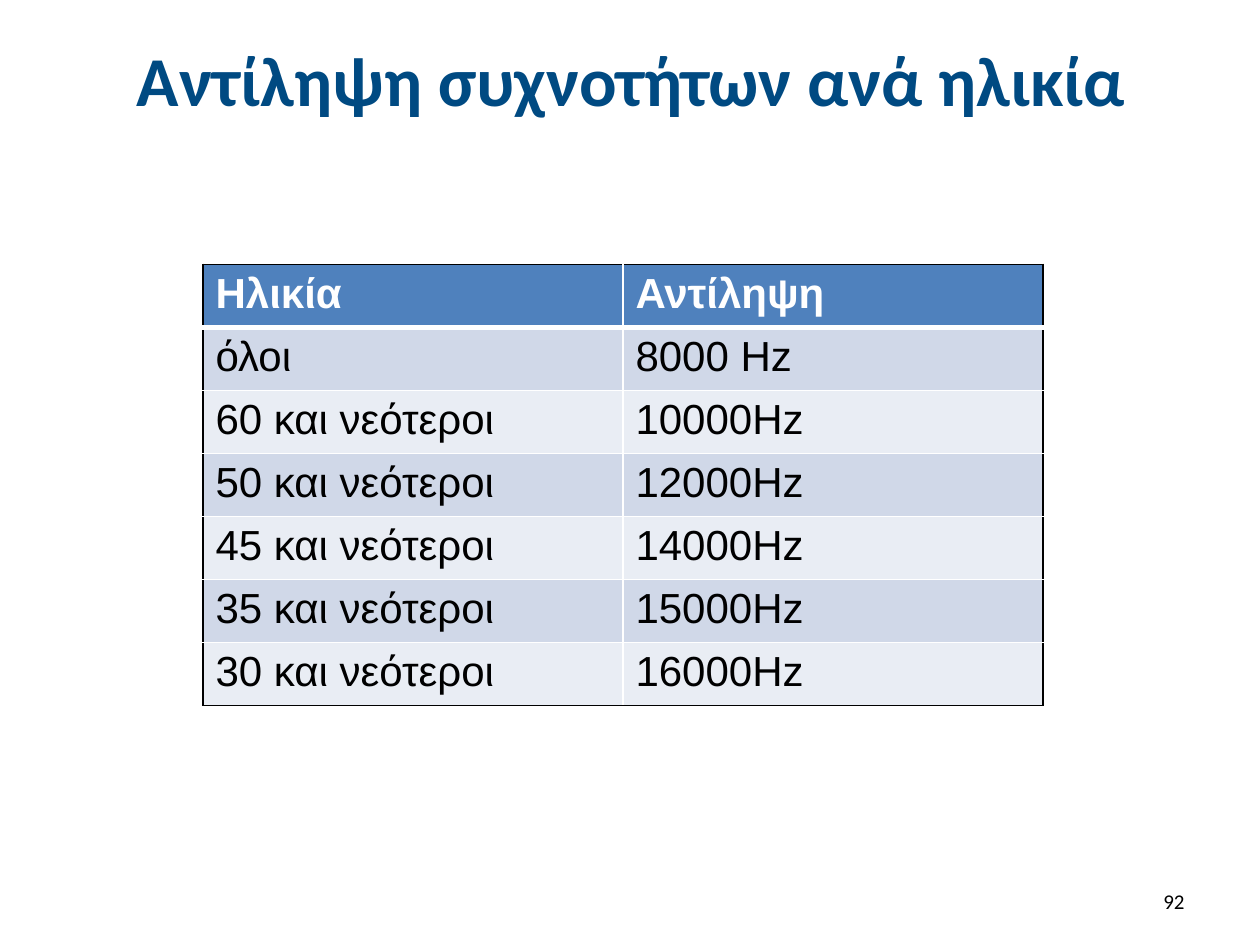
from dataclasses import dataclass

import pptx
import pptx.dml.color
import pptx.enum.text
import pptx.oxml
import pptx.oxml.ns
import pptx.util
from lxml import etree

Pt = pptx.util.Pt
ALIGN = pptx.enum.text.PP_ALIGN
MIDDLE = pptx.enum.text.MSO_ANCHOR.MIDDLE

WHITE, BLACK, NAVY, BLUE = "FFFFFF", "000000", "004A82", "4F81BD"
BANDS = ("D0D8E8", "E9EDF4")
ROWS = (
    ("Ηλικία", "Αντίληψη"),
    ("όλοι", "8000 Hz"),
    ("60 και νεότεροι", "10000Hz"),
    ("50 και νεότεροι", "12000Hz"),
    ("45 και νεότεροι", "14000Hz"),
    ("35 και νεότεροι", "15000Hz"),
    ("30 και νεότεροι", "16000Hz"),
)
LEFT, TOP, COL, ROW = 116, 151, 240, 34


@dataclass
class Label:
    text: str
    box: tuple[float, float, float, float]
    align: ALIGN
    font: dict


@dataclass
class Edge:
    side: str
    color: str
    width: float = 1


LABELS = (
    Label("Αντίληψη συχνοτήτων ανά ηλικία", (36.5, 9.5, 648, 71), ALIGN.CENTER,
          {"name": "Calibri", "size": Pt(40), "bold": True, "color": NAVY}),
    Label("92", (516, 500.5, 168, 28.5), ALIGN.RIGHT,
          {"name": "Calibri", "size": Pt(12), "bold": False, "color": BLACK}),
)


def paint(target, color: str) -> None:
    target.rgb = pptx.dml.color.RGBColor.from_string(color)


def write(frame, text: str, style: dict) -> None:
    run = frame.paragraphs[0].add_run()
    run.text = text
    for key, value in style.items():
        if key == "color":
            paint(run.font.color, value)
        else:
            setattr(run.font, key, value)


def draw_label(slide, label: Label) -> None:
    frame = slide.shapes.add_textbox(*map(Pt, label.box)).text_frame
    frame.word_wrap = True
    frame.vertical_anchor = MIDDLE
    frame.paragraphs[0].alignment = label.align
    write(frame, label.text, label.font)


def draw_edge(cell, edge: Edge) -> None:
    tag = pptx.oxml.ns.qn
    props = cell._tc.get_or_add_tcPr()
    line = etree.SubElement(props, tag(f"a:ln{edge.side}"), w=str(Pt(edge.width)))
    fill = etree.SubElement(line, tag("a:solidFill"))
    etree.SubElement(fill, tag("a:srgbClr"), val=edge.color)


def draw_table(slide) -> None:
    count, width = len(ROWS), len(ROWS[0])
    table = slide.shapes.add_table(
        count, width, Pt(LEFT), Pt(TOP), Pt(COL * width), Pt(ROW * count)).table
    for col in table.columns:
        col.width = Pt(COL)
    for row in table.rows:
        row.height = Pt(ROW)

    for r, texts in enumerate(ROWS):
        head = r == 0
        for c, text in enumerate(texts):
            cell = table.cell(r, c)
            # Black outside, white inside, thick rule under the header
            edges = (
                Edge("L", BLACK if c == 0 else WHITE),
                Edge("R", BLACK if c == width - 1 else WHITE),
                Edge("T", BLACK if head else WHITE, 3 if r == 1 else 1),
                Edge("B", BLACK if r == count - 1 else WHITE, 3 if head else 1),
            )
            for edge in edges:
                draw_edge(cell, edge)
            cell.fill.solid()
            paint(cell.fill.fore_color, BLUE if head else BANDS[(r - 1) % 2])
            write(cell.text_frame, text,
                  {"name": "Arial", "size": Pt(24), "bold": head,
                   "color": WHITE if head else BLACK})


def main() -> None:
    deck = pptx.Presentation()
    deck.slide_width, deck.slide_height = Pt(720), Pt(540)
    slide = deck.slides.add_slide(deck.slide_layouts[6])

    # Title and page number
    for label in LABELS:
        draw_label(slide, label)

    # Age and frequency table
    draw_table(slide)
    deck.save("out.pptx")


if __name__ == "__main__":
    main()
